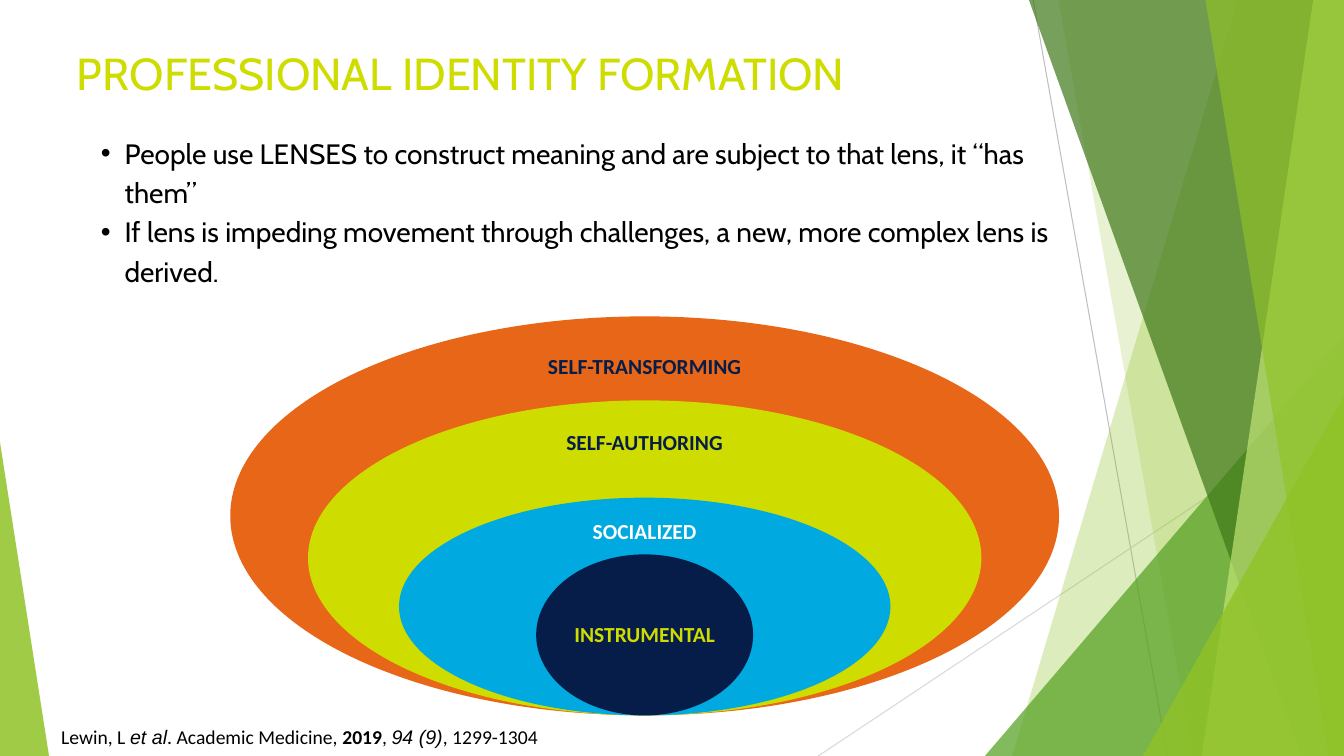
from lxml import etree
from pptx import Presentation
from pptx.dml.color import RGBColor
from pptx.enum import shapes as sh, text as tx
from pptx.oxml.ns import qn
from pptx.util import Pt

WIDE, HIGH = 960, 540
LEAF = RGBColor(0x90, 0xC2, 0x26)
GREEN = RGBColor(0x54, 0xA0, 0x21)
DARK = RGBColor(0x3F, 0x78, 0x19)
PALE = RGBColor(0xC0, 0xE4, 0x74)
GREY = RGBColor(0xBF, 0xBF, 0xBF)
MIST = RGBColor(0xD9, 0xD9, 0xD9)
ORANGE = RGBColor(0xE7, 0x66, 0x18)
LIME = RGBColor(0xCE, 0xDC, 0x00)
BLUE = RGBColor(0x00, 0xA9, 0xE0)
NAVY = RGBColor(0x07, 0x1D, 0x49)
WHITE = RGBColor(0xFF, 0xFF, 0xFF)
BLACK = RGBColor(0, 0, 0)

MID, BASE = 460.5, 511  # shared centre and bottom of the nested lenses
# name, text colour, fill, lens width and height, label box (width, top, height)
LENSES = [
    ("SELF-TRANSFORMING", NAVY, ORANGE, 592, 285, (481, 245.5, 238)),
    ("SELF-AUTHORING", NAVY, LIME, 481, 225, (391, 300, 189)),
    ("SOCIALIZED", WHITE, BLUE, 351, 155.5, (284, 363.6, 133)),
    ("INSTRUMENTAL", LIME, NAVY, 155, 115, (136, 404, 96.5)),
]
POINTS = [
    "People use LENSES to construct meaning and are subject to that lens, "
    "it “has them”",
    "If lens is impeding movement through challenges, a new, more complex "
    "lens is derived.",
]
PLAIN = {"name": "Calibri"}
SLANT = {"name": "Arial", "italic": True}
CITE = [
    ("Lewin, L ", PLAIN),
    ("et al", SLANT),
    (". Academic Medicine, ", PLAIN),
    ("2019", {"name": "Calibri", "bold": True}),
    (", ", PLAIN),
    ("94 (9)", SLANT),
    (", 1299-1304", PLAIN),
]


def paint(shape, color, alpha=100):
    """Fill without outline or shadow; alpha is the opacity in percent."""
    shape.shadow.inherit = False
    shape.line.fill.background()
    shape.fill.solid()
    shape.fill.fore_color.rgb = color
    if alpha < 100:
        clr = shape.fill._xPr.find(".//" + qn("a:srgbClr"))
        etree.SubElement(clr, qn("a:alpha"), val=str(alpha * 1000))


def add_line(slide, start, end, color):
    line = slide.shapes.add_connector(
        sh.MSO_CONNECTOR.STRAIGHT, *map(Pt, start + end))
    line.line.color.rgb = color
    line.line.width = Pt(0.75)
    etree.SubElement(line._element.spPr, qn("a:effectLst"))


def add_blade(slide, top, foot, color, alpha):
    """Full-height band from a slanted left edge to the slide's right side."""
    form = slide.shapes.build_freeform(Pt(top), 0)
    ends = [(WIDE, 0), (WIDE, HIGH), (foot, HIGH)]
    form.add_line_segments([(Pt(x), Pt(y)) for x, y in ends])
    paint(form.convert_to_shape(), color, alpha)


def add_wedge(slide, left, top, width, tip, color, alpha):
    """Triangle standing on the slide's bottom; tip is 0 (left) or 1 (right)."""
    wedge = slide.shapes.add_shape(
        sh.MSO_SHAPE.ISOSCELES_TRIANGLE,
        *map(Pt, (left, top, width, HIGH - top)))
    wedge.adjustments[0] = tip
    paint(wedge, color, alpha)


def add_oval(slide, width, height, color):
    box = (MID - width / 2, BASE - height, width, height)
    paint(slide.shapes.add_shape(sh.MSO_SHAPE.OVAL, *map(Pt, box)), color)


def add_box(slide, box, inset=0, anchor=tx.MSO_ANCHOR.TOP):
    frame = slide.shapes.add_textbox(*map(Pt, box)).text_frame
    frame.word_wrap = True
    frame.vertical_anchor = anchor
    for side in ("left", "top", "right", "bottom"):
        setattr(frame, "margin_" + side, Pt(inset))
    return frame


def add_run(para, words, color, size, **style):
    run = para.add_run()
    run.text = words
    run.font.color.rgb = color
    run.font.size = Pt(size)
    for key, val in style.items():
        setattr(run.font, key, val)


def set_para(para, space, align=tx.PP_ALIGN.LEFT):
    para.line_spacing = Pt(space)
    para.alignment = align


def add_bullet(para):
    para.level = 1
    props = para._p.get_or_add_pPr()
    props.set("marL", str(Pt(34)))
    props.set("indent", str(Pt(-17)))
    etree.SubElement(props, qn("a:buFont"), typeface="Arial")
    etree.SubElement(props, qn("a:buChar"), char="•")


def add_decor(slide):
    add_line(slide, (738, 0), (834, HIGH), GREY)
    add_line(slide, (WIDE, 290), (584.5, HIGH), MIST)
    add_blade(slide, 884, 723, LEAF, 30)
    add_blade(slide, 756, 852, LEAF, 20)
    add_wedge(slide, 703.5, 240, 256.5, 1, GREEN, 72)
    add_blade(slide, 735, 929.5, DARK, 70)
    add_blade(slide, 938, 858.5, PALE, 70)
    add_blade(slide, 861, 949, LEAF, 65)
    add_wedge(slide, 816.5, 283, 143.5, 1, LEAF, 80)
    add_wedge(slide, 0, 316, 35, 0, LEAF, 85)


def add_lenses(slide):
    for name, ink, fill, width, height, (span, top, tall) in LENSES:
        add_oval(slide, width, height, fill)
        core = name == LENSES[-1][0]
        anchor = tx.MSO_ANCHOR.MIDDLE if core else tx.MSO_ANCHOR.TOP
        box = (MID - span / 2, top, span, tall)
        para = add_box(slide, box, 3 if core else 3.6, anchor).paragraphs[0]
        set_para(para, 19.9 if core else 21.5, tx.PP_ALIGN.CENTER)
        add_run(para, name, ink, 15.3, name="Calibri", bold=True)


def add_texts(slide):
    title = add_box(slide, (55, 29.5, 848, 39)).paragraphs[0]
    set_para(title, 41.6)
    add_run(title, "PROFESSIONAL IDENTITY FORMATION", LIME, 32, name="Cabin")

    cite = add_box(slide, (23, 517.5, 382, 17)).paragraphs[0]
    set_para(cite, 17.3, tx.PP_ALIGN.CENTER)
    for words, style in CITE:
        add_run(cite, words, BLACK, 14, **style)

    frame = add_box(slide, (55, 93.5, 702, 111))
    for i, words in enumerate(POINTS):
        para = frame.add_paragraph() if i else frame.paragraphs[0]
        add_bullet(para)
        set_para(para, 28)
        add_run(para, words, BLACK, 20, name="Cabin")


def main():
    deck = Presentation()
    deck.slide_width, deck.slide_height = Pt(WIDE), Pt(HIGH)
    slide = deck.slides.add_slide(deck.slide_layouts[6])
    add_decor(slide)
    add_lenses(slide)
    add_texts(slide)
    deck.save("out.pptx")


if __name__ == "__main__":
    main()
